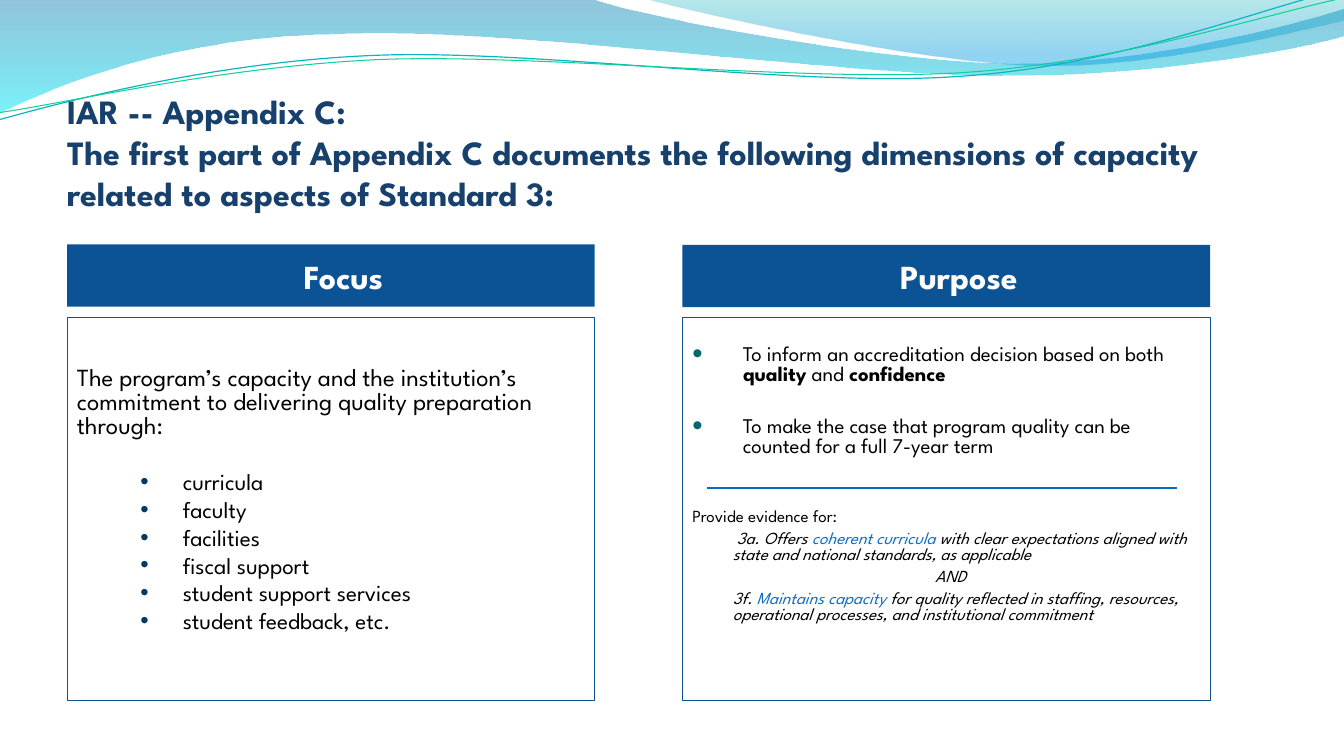
from lxml.etree import SubElement
from pptx import Presentation
from pptx.dml.color import RGBColor
from pptx.enum.shapes import MSO_CONNECTOR, MSO_SHAPE
from pptx.enum.text import MSO_ANCHOR, PP_ALIGN
from pptx.oxml import parse_xml
from pptx.oxml.ns import nsdecls, qn
from pptx.util import Cm, Pt

FONT = "League Spartan"
NAVY, BLUE, LINK = "17406D", "0B5394", "0F6FC6"
WHITE, BLACK = "FFFFFF", "000000"
LEFT_X, RIGHT_X, COLUMN_W = 1.69, 17.2, 13.3

BACK_WAVE = [
    [(0, 0)], [(14.91, -0.03)],
    [(16.1, 0.43), (22.45, 1.6), (25.68, 1.6)],
    [(28.88, 1.6), (32.44, 0.66), (33.86, 0.23)],
    [(33.88, 0.91)],
    [(33.3, 1.12), (29.44, 1.93), (25.25, 1.91)],
    [(21.06, 1.91), (12.93, 0.71), (8.71, 0.86)],
    [(4.37, 0.91), (1.55, 2.11), (-0.05, 2.87)],
]
FRONT_WAVE = [
    [(16.21, -0.03)],
    [(17.25, 0.28), (23.09, 1.57), (26.04, 1.65)],
    [(28.96, 1.75), (32.56, 0.81), (33.86, 0.53)],
    [(33.86, 0)],
]
TEAL_STRAND = [
    [(-0.03, 3.02)],
    [(1.6, 2.57), (5.33, 1.57), (9.37, 1.4)],
    [(13.39, 1.22), (20.04, 2.21), (24.1, 1.93)],
    [(28.19, 1.68), (31.78, 0.2), (33.78, -0.25)],
]
GREEN_STRAND = [
    [(-0.03, 2.84)],
    [(1.57, 2.62), (5.54, 1.68), (9.58, 1.5)],
    [(13.64, 1.35), (20.22, 2.08), (24.26, 1.83)],
    [(28.3, 1.57), (31.88, 0.36), (33.86, -0.05)],
]
CAPACITY = ["curricula", "faculty", "facilities", "fiscal support",
            "student support services", "student feedback, etc."]


def rgb(value):
    """Turn a hex string into a colour."""
    return RGBColor.from_string(value)


def add_curve(s, segments, close):
    """Draw an outline of straight (one point) and Bezier (three points) segments."""
    points = [(Cm(x), Cm(y)) for seg in segments for x, y in seg]
    fb = s.shapes.build_freeform(*points[0], scale=1.0)
    fb.add_line_segments(points[1:], close=close)
    sp = fb.convert_to_shape()
    sp.shadow.inherit = False
    steps = iter(list(sp.element.iter(qn("a:lnTo"))))
    for seg in segments[1:]:
        start, *rest = [next(steps) for _ in seg]
        if rest:
            curve = SubElement(start.getparent(), qn("a:cubicBezTo"))
            start.addprevious(curve)
            for step in (start, *rest):
                curve.append(step[0])
                step.getparent().remove(step)
    return sp


def add_wave(s, segments, stops):
    """Add a wave filled with a translucent vertical gradient."""
    sp = add_curve(s, segments, True)
    sp.line.fill.background()
    marks = "".join(
        f'<a:gs pos="{pos * 1000}"><a:srgbClr val="{color}">'
        f'<a:alpha val="{alpha * 1000}"/></a:srgbClr></a:gs>'
        for pos, color, alpha in stops)
    grad = parse_xml(f'<a:gradFill {nsdecls("a")}><a:gsLst>{marks}</a:gsLst>'
                     '<a:lin ang="5400000" scaled="0"/></a:gradFill>')
    sp.element.spPr.find(qn("a:custGeom")).addnext(grad)


def add_strand(s, segments, color, width):
    """Add a thin open curve."""
    sp = add_curve(s, segments, False)
    sp.fill.background()
    sp.line.color.rgb = rgb(color)
    sp.line.width = Pt(width)


def set_frame(sp, anchor, margins):
    """Set wrapping, anchor and margins, and return the text frame."""
    tf = sp.text_frame
    tf.word_wrap = True
    tf.vertical_anchor = anchor
    tf.margin_left, tf.margin_top, tf.margin_right, tf.margin_bottom = map(Cm, margins)
    return tf


def add_panel(s, x, y, h, anchor, margins, fill=None):
    """Add a column-wide rectangle, filled or outlined, and return its text frame."""
    sp = s.shapes.add_shape(MSO_SHAPE.RECTANGLE, Cm(x), Cm(y), Cm(COLUMN_W), Cm(h))
    sp.shadow.inherit = False
    if fill:
        sp.fill.solid()
        sp.fill.fore_color.rgb = rgb(fill)
        sp.line.fill.background()
    else:
        sp.fill.background()
        sp.line.color.rgb = rgb(BLUE)
        sp.line.width = Pt(0.75)
    return set_frame(sp, anchor, margins)


def add_par(tf, runs, size, color=BLACK, before=0, spacing=0.8, left=0, indent=0,
            bullet=None, align=PP_ALIGN.LEFT, bold=False, italic=False):
    """Add a paragraph of (text, overrides) runs."""
    first = not tf.paragraphs[0].runs
    p = tf.paragraphs[0] if first else tf.add_paragraph()
    p.alignment = align
    p.line_spacing = spacing
    p.space_before = Pt(0 if first else before)
    pPr = p._p.get_or_add_pPr()
    pPr.set("marL", str(Cm(left)))
    pPr.set("indent", str(Cm(indent)))
    if bullet:
        bullet_color, percent = bullet
        clr = SubElement(pPr, qn("a:buClr"))
        SubElement(clr, qn("a:srgbClr"), val=bullet_color)
        SubElement(pPr, qn("a:buSzPct"), val=str(percent * 1000))
        SubElement(pPr, qn("a:buFont"), typeface="Arial")
        SubElement(pPr, qn("a:buChar"), char="•")
    for text, own in runs:
        r = p.add_run()
        r.text = text
        r.font.name = FONT
        r.font.size = Pt(size)
        r.font.bold = own.get("bold", bold)
        r.font.italic = italic
        r.font.color.rgb = rgb(own.get("color", color))


def add_title(s):
    """Add the slide title."""
    sp = s.shapes.add_textbox(Cm(LEFT_X), Cm(2.28), Cm(30.48), Cm(3.12))
    tf = set_frame(sp, MSO_ANCHOR.TOP, (0, 0, 0, 0))
    for text in ("IAR -- Appendix C:",
                 "The first part of Appendix C documents the following dimensions "
                 "of capacity related to aspects of Standard 3:"):
        add_par(tf, [(text, {})], 24.3, NAVY, spacing=1.0, bold=True)


def add_header(s, x, y, text):
    """Add a column heading."""
    tf = add_panel(s, x, y, 1.57, MSO_ANCHOR.MIDDLE, (0.13, 0, 0.13, 0), BLUE)
    add_par(tf, [(text, {})], 24, WHITE, spacing=1.0, left=1.27, indent=-0.64,
            align=PP_ALIGN.CENTER, bold=True)


def add_focus(s):
    """Add the focus panel."""
    tf = add_panel(s, LEFT_X, 8, 9.66, MSO_ANCHOR.MIDDLE, (0.25, 0, 0.25, 0.41))
    add_par(tf, [("The program’s capacity and the institution’s commitment to "
                  "delivering quality preparation through:", {})], 17.6)
    for i, item in enumerate(CAPACITY):
        add_par(tf, [(item, {})], 16.5, before=4 if i else 24.5, left=2.67,
                indent=-1.07, bullet=("073763", 103))


def add_purpose(s):
    """Add the purpose panel with its divider."""
    tf = add_panel(s, RIGHT_X, 8, 9.66, MSO_ANCHOR.TOP, (0.25, 0.71, 0.25, 0.13))
    strong, link = {"bold": True}, {"color": LINK}
    goals = [
        [("To inform an accreditation decision based on both ", {}),
         ("quality", strong), (" and ", {}), ("confidence", strong)],
        [("To make the case that program quality can be counted for a full "
          "7-year term", {})],
    ]
    for runs in goals:
        add_par(tf, runs, 14.9, before=23, left=1.27, indent=-1.27,
                bullet=("05686C", 141))
    add_par(tf, [("Provide evidence for:", {})], 12.1, before=36.6)
    evidence = [
        (1.02, 0.1, [("3a. Offers ", {}), ("coherent curricula ", link),
                     ("with clear expectations aligned with state and national "
                      "standards, as applicable", {})]),
        (6.12, 0, [("AND", {})]),
        (1.02, 0, [("3f. ", {}), ("Maintains capacity ", link),
                   ("for quality reflected in staffing, resources, operational "
                    "processes, and institutional commitment", {})]),
    ]
    for left, indent, runs in evidence:
        add_par(tf, runs, 12.1, before=4, left=left, indent=indent, italic=True)
    line = s.shapes.add_connector(MSO_CONNECTOR.STRAIGHT, Cm(17.81), Cm(12.3),
                                  Cm(29.67), Cm(12.3))
    line.line.color.rgb = rgb("096CC5")
    line.line.width = Pt(1)
    SubElement(line.element.spPr, qn("a:effectLst"))


def main():
    """Build and save the slide."""
    prs = Presentation()
    prs.slide_width, prs.slide_height = Cm(33.87), Cm(19.05)
    s = prs.slides.add_slide(prs.slide_layouts[6])
    add_wave(s, BACK_WAVE, [(0, "0079AD", 43), (100, "00E9F7", 53)])
    add_wave(s, FRONT_WAVE, [(0, "00ABB4", 28), (80, "0099E4", 43), (100, "0099E4", 43)])
    add_strand(s, TEAL_STRAND, "09B6BE", 0.85)
    add_strand(s, GREEN_STRAND, "10CF9B", 0.75)
    add_title(s)
    add_header(s, LEFT_X, 6.16, "Focus")
    add_focus(s)
    add_header(s, RIGHT_X, 6.17, "Purpose")
    add_purpose(s)
    prs.save("out.pptx")


if __name__ == "__main__":
    main()
